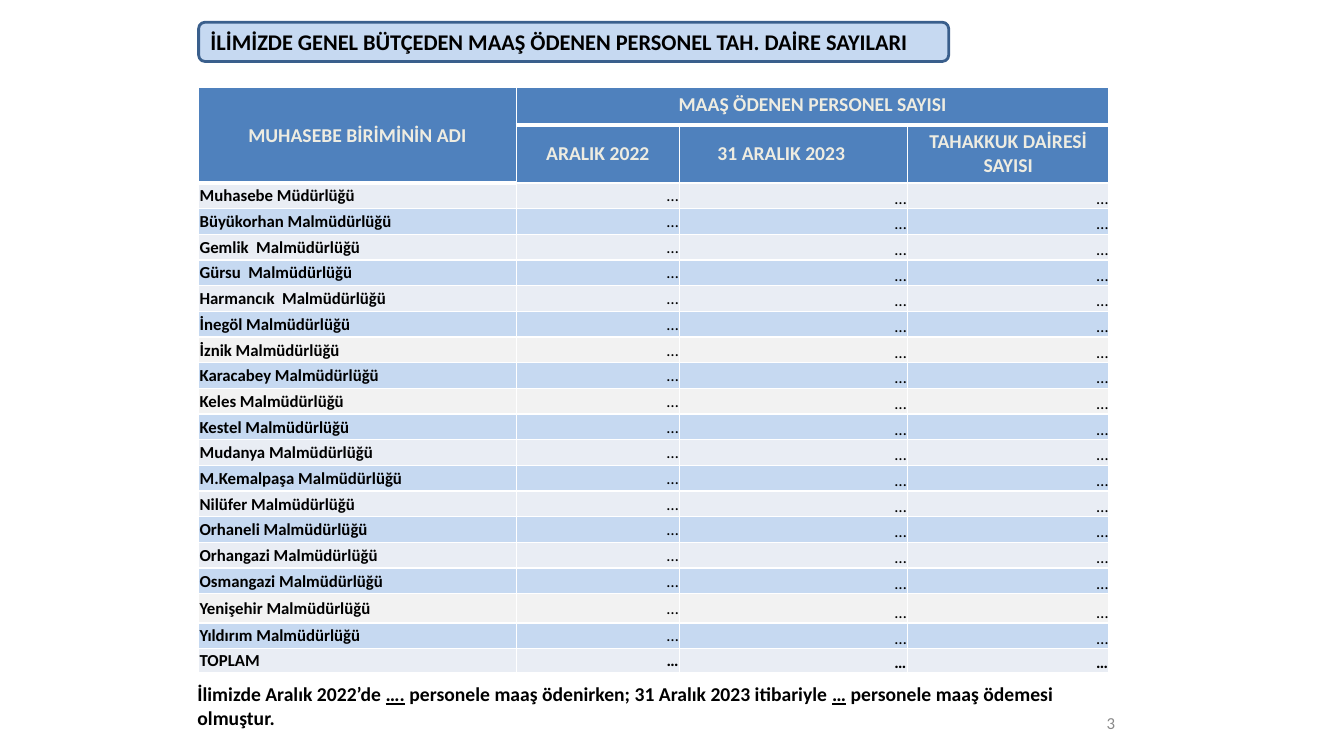
from dataclasses import dataclass
from typing import Any

from lxml.etree import SubElement
from pptx import Presentation
from pptx.dml.color import RGBColor
from pptx.enum.shapes import MSO_SHAPE
from pptx.enum.text import MSO_ANCHOR, PP_ALIGN
from pptx.oxml.ns import qn
from pptx.util import Emu, Pt

PX = 4572
COLORS = {
    "header": "4F81BD", "header_text": "EEECE1", "blue": "C6D9F1",
    "pale": "E9EDF4", "gray": "F2F2F2", "black": "000000",
    "white": "FFFFFF", "outline": "3A5F8C", "page": "898989",
}
COLUMN_WIDTHS = [630, 324, 452, 400]
HEADER_HEIGHTS = [74, 115]
OFFICE_HEIGHT = 51
SPECIAL_HEIGHTS = {"Yenişehir Malmüdürlüğü": 58, "TOPLAM": 48}
GRAY_OFFICES = {"İznik Malmüdürlüğü", "Keles Malmüdürlüğü", "Yenişehir Malmüdürlüğü"}
OFFICES = [
    "Muhasebe Müdürlüğü", "Büyükorhan Malmüdürlüğü", "Gemlik  Malmüdürlüğü",
    "Gürsu  Malmüdürlüğü", "Harmancık  Malmüdürlüğü", "İnegöl Malmüdürlüğü",
    "İznik Malmüdürlüğü", "Karacabey Malmüdürlüğü", "Keles Malmüdürlüğü",
    "Kestel Malmüdürlüğü", "Mudanya Malmüdürlüğü", "M.Kemalpaşa Malmüdürlüğü",
    "Nilüfer Malmüdürlüğü", "Orhaneli Malmüdürlüğü", "Orhangazi Malmüdürlüğü",
    "Osmangazi Malmüdürlüğü", "Yenişehir Malmüdürlüğü", "Yıldırım Malmüdürlüğü",
    "TOPLAM",
]
HEADER_MARGINS = (20, 10, 20, 10)
OFFICE_MARGINS = (2, 2, 2, 0)


@dataclass(frozen=True)
class Phrase:
    text: str
    size: int
    color: str = "black"
    bold: bool = True
    underline: bool = False


@dataclass(frozen=True)
class Entry:
    row: int
    column: int
    phrase: Phrase
    fill: str
    align: PP_ALIGN
    anchor: MSO_ANCHOR = MSO_ANCHOR.MIDDLE
    margins: tuple[int, int, int, int] = OFFICE_MARGINS


@dataclass(frozen=True)
class Caption:
    left: int
    top: int
    width: int
    height: int
    phrases: tuple[Phrase, ...]
    align: PP_ALIGN = PP_ALIGN.LEFT
    anchor: MSO_ANCHOR = MSO_ANCHOR.TOP


HEADERS = [
    Entry(row, column, Phrase(text, 14, "header_text"), "header",
          PP_ALIGN.CENTER, anchor, margins)
    for row, column, text, anchor, margins in [
        (0, 0, "MUHASEBE BİRİMİNİN ADI", MSO_ANCHOR.MIDDLE, HEADER_MARGINS),
        (0, 1, "MAAŞ ÖDENEN PERSONEL SAYISI", MSO_ANCHOR.TOP, HEADER_MARGINS),
        (1, 1, "ARALIK 2022", MSO_ANCHOR.MIDDLE, HEADER_MARGINS),
        (1, 2, "31 ARALIK 2023", MSO_ANCHOR.MIDDLE, (20, 10, 68, 10)),
        (1, 3, "TAHAKKUK DAİRESİ SAYISI", MSO_ANCHOR.MIDDLE, HEADER_MARGINS),
    ]
]
TITLE = Caption(394, 44, 1488, 78, (
    Phrase("İLİMİZDE GENEL BÜTÇEDEN MAAŞ ÖDENEN PERSONEL TAH. DAİRE SAYILARI", 16),
), anchor=MSO_ANCHOR.MIDDLE)
SUMMARY = Caption(372, 1344, 1812, 114, (
    Phrase("İlimizde Aralık 2022’de ", 14),
    Phrase("….", 14, underline=True),
    Phrase(" personele maaş ödenirken; 31 Aralık 2023 itibariyle ", 14),
    Phrase("…", 14, underline=True),
    Phrase(" personele maaş ödemesi olmuştur.", 14),
))
PAGE_NUMBER = Caption(1766, 1394, 466, 80, (Phrase("3", 12, "page", False),),
                      PP_ALIGN.RIGHT, MSO_ANCHOR.MIDDLE)


def px(length: int) -> Emu:
    return Emu(length * PX)


def rgb(name: str) -> RGBColor:
    return RGBColor.from_string(COLORS[name])


def apply(target: Any, values: dict[str, Any]) -> None:
    for name, value in values.items():
        setattr(target, name, value)


def write(frame: Any, phrases: tuple[Phrase, ...], align: PP_ALIGN) -> None:
    paragraph = frame.paragraphs[0]
    paragraph.alignment = align
    for phrase in phrases:
        run = paragraph.add_run()
        run.text = phrase.text
        apply(run.font, {"name": "Calibri", "size": Pt(phrase.size),
                         "bold": phrase.bold, "underline": phrase.underline})
        run.font.color.rgb = rgb(phrase.color)


def draw_borders(cell: Any, row: int, column: int) -> None:
    thick_top = (row == 1 and column > 0) or (row == 2 and column == 0)
    thick_bottom = row == 0 or (row == 1 and column == 0)
    points = {"lnL": 1, "lnR": 1, "lnT": 3 if thick_top else 1,
              "lnB": 3 if thick_bottom else 1}
    properties = cell._tc.get_or_add_tcPr()
    for side, width in points.items():
        border = SubElement(properties, qn(f"a:{side}"), w=str(Pt(width)))
        fill = SubElement(border, qn("a:solidFill"))
        SubElement(fill, qn("a:srgbClr"), val=COLORS["white"])


def fill_entry(table: Any, entry: Entry) -> None:
    cell = table.cell(entry.row, entry.column)
    left, top, right, bottom = map(px, entry.margins)
    apply(cell, {"margin_left": left, "margin_top": top, "margin_right": right,
                 "margin_bottom": bottom, "vertical_anchor": entry.anchor})
    cell.fill.solid()
    cell.fill.fore_color.rgb = rgb(entry.fill)
    write(cell.text_frame, (entry.phrase,), entry.align)


def office_entries(index: int, office: str) -> list[Entry]:
    row = index + len(HEADER_HEIGHTS)
    fill = "blue" if index % 2 else "gray" if office in GRAY_OFFICES else "pale"
    count = Phrase("…", 12, bold=office == "TOPLAM")
    name = Entry(row, 0, Phrase(office, 12), fill, PP_ALIGN.LEFT)
    counts = [
        Entry(row, column, count, fill, PP_ALIGN.RIGHT,
              MSO_ANCHOR.MIDDLE if column == 1 else MSO_ANCHOR.BOTTOM)
        for column in range(1, len(COLUMN_WIDTHS))
    ]
    return [name, *counts]


def draw_staff_table(slide: Any) -> None:
    heights = HEADER_HEIGHTS + [SPECIAL_HEIGHTS.get(o, OFFICE_HEIGHT) for o in OFFICES]
    table = slide.shapes.add_table(
        len(heights), len(COLUMN_WIDTHS), px(394), px(174),
        px(sum(COLUMN_WIDTHS)), px(sum(heights))).table
    apply(table, {"first_row": False, "horz_banding": False})
    for column, width in zip(table.columns, COLUMN_WIDTHS):
        column.width = px(width)
    for row, height in zip(table.rows, heights):
        row.height = px(height)
    for row in range(len(heights)):
        for column in range(len(COLUMN_WIDTHS)):
            draw_borders(table.cell(row, column), row, column)
    table.cell(0, 0).merge(table.cell(1, 0))
    table.cell(0, 1).merge(table.cell(0, 3))
    for header in HEADERS:
        fill_entry(table, header)
    for index, office in enumerate(OFFICES):
        for entry in office_entries(index, office):
            fill_entry(table, entry)


def write_caption(shape: Any, caption: Caption) -> None:
    apply(shape.text_frame, {"word_wrap": True, "vertical_anchor": caption.anchor})
    write(shape.text_frame, caption.phrases, caption.align)


def bounds(caption: Caption) -> list[Emu]:
    return [px(v) for v in (caption.left, caption.top, caption.width, caption.height)]


def draw_title(slide: Any) -> None:
    banner = slide.shapes.add_shape(MSO_SHAPE.ROUNDED_RECTANGLE, *bounds(TITLE))
    banner.shadow.inherit = False
    banner.fill.solid()
    banner.fill.fore_color.rgb = rgb("blue")
    banner.line.color.rgb = rgb("outline")
    banner.line.width = Pt(2)
    write_caption(banner, TITLE)


def main() -> None:
    presentation = Presentation()
    apply(presentation, {"slide_width": px(2666), "slide_height": px(1500)})
    slide = presentation.slides.add_slide(presentation.slide_layouts[6])
    draw_staff_table(slide)
    draw_title(slide)
    for caption in (SUMMARY, PAGE_NUMBER):
        write_caption(slide.shapes.add_textbox(*bounds(caption)), caption)
    presentation.save("out.pptx")


if __name__ == "__main__":
    main()
